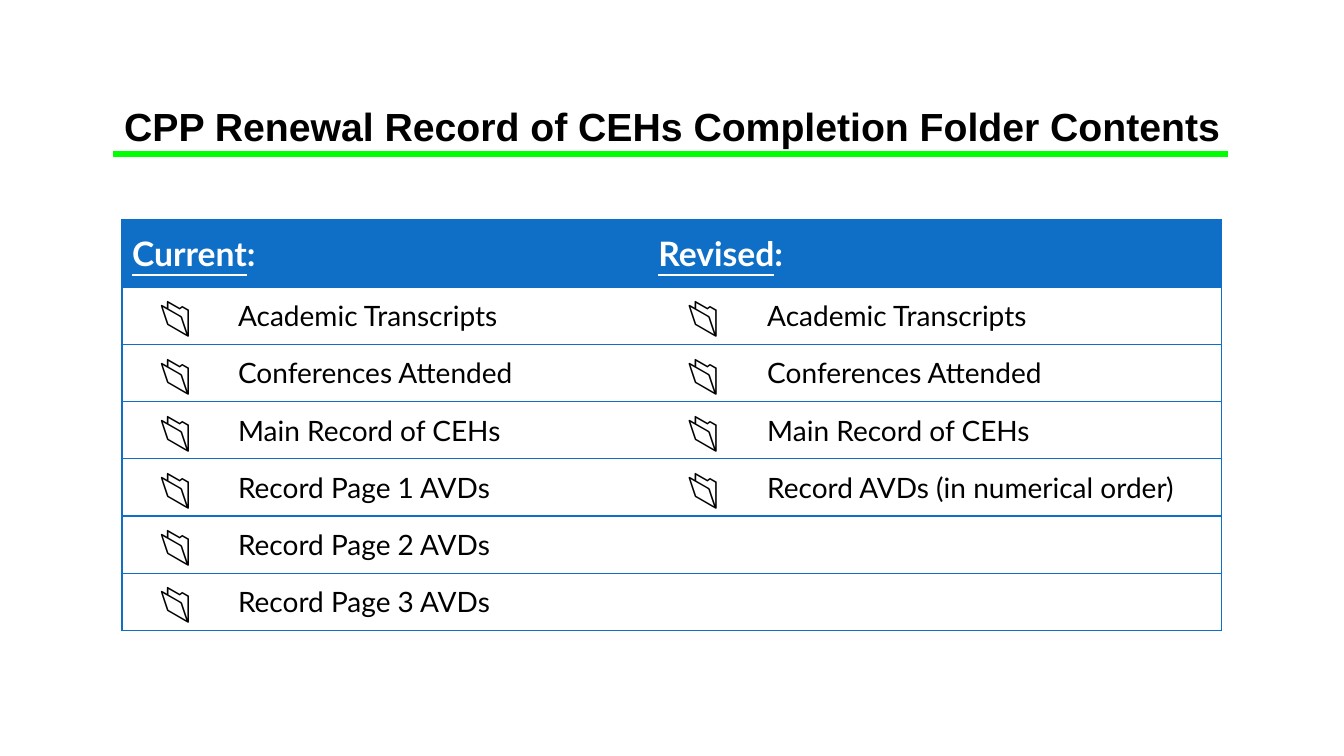
from dataclasses import dataclass
from itertools import zip_longest

from lxml import etree
from pptx import Presentation, util as u
from pptx.dml.color import RGBColor
from pptx.enum import shapes, text
from pptx.oxml import ns

BLUE, GREEN, BLACK, WHITE = "0F6FC6", "00FF00", "000000", "FFFFFF"
FOLDER = "📂"
SLIDE_WIDTH, SLIDE_HEIGHT = u.Inches(13.33), u.Inches(7.5)


@dataclass
class FolderList:
    heading: str
    icon_width: float  # percent of the slide width
    label_width: float
    items: list[str]


@dataclass
class TextStyle:
    size: int
    font: str = "Lato"
    color: str = BLACK
    bold: bool = False


SHARED_ITEMS = ["Academic Transcripts", "Conferences Attended", "Main Record of CEHs"]
FOLDER_LISTS = [
    FolderList("Current", 7.88, 31.28,
               SHARED_ITEMS + [f"Record Page {page} AVDs" for page in (1, 2, 3)]),
    FolderList("Revised", 8.1, 34.58,
               SHARED_ITEMS + ["Record AVDs (in numerical order)"]),
]
TITLE = TextStyle(28, "Arial", bold=True)
HEADING = TextStyle(24, color=WHITE, bold=True)
ICON = TextStyle(28, bold=True)
LABEL = TextStyle(20)


def across(percent: float) -> int:
    return round(SLIDE_WIDTH * percent / 100)


def down(percent: float) -> int:
    return round(SLIDE_HEIGHT * percent / 100)


def rgb(color: str) -> RGBColor:
    return RGBColor.from_string(color)


def style_run(run, style: TextStyle) -> None:
    run.font.size = u.Pt(style.size)
    run.font.name = style.font
    run.font.bold = style.bold
    run.font.color.rgb = rgb(style.color)


def write(frame, words: str, style: TextStyle, centred: bool = False) -> None:
    frame.text = words
    paragraph = frame.paragraphs[0]
    paragraph.alignment = text.PP_ALIGN.CENTER if centred else text.PP_ALIGN.LEFT
    style_run(paragraph.runs[0], style)


def set_borders(cell, visible: str) -> None:
    """Draw blue edges on the sides in visible and clear the others."""
    properties = cell._tc.get_or_add_tcPr()
    for side in "LRTB":
        line = etree.SubElement(properties, ns.qn(f"a:ln{side}"), w=str(u.Pt(1)))
        if side in visible:
            fill = etree.SubElement(line, ns.qn("a:solidFill"))
            etree.SubElement(fill, ns.qn("a:srgbClr"), val=BLUE)
        else:
            etree.SubElement(line, ns.qn("a:noFill"))


def add_title(slide) -> None:
    title = slide.shapes.title
    title.left, title.top = across(8.18), down(12.8)
    title.width, title.height = across(83.65), down(7.6)
    frame = title.text_frame
    frame.word_wrap = True
    frame.auto_size = text.MSO_AUTO_SIZE.SHAPE_TO_FIT_TEXT
    frame.vertical_anchor = text.MSO_ANCHOR.TOP
    write(frame, "CPP Renewal Record of CEHs Completion Folder Contents", TITLE, True)


def add_title_rule(slide) -> None:
    rule = slide.shapes.add_connector(
        shapes.MSO_CONNECTOR.STRAIGHT, across(8.4), down(20.4), across(91.37), down(20.4))
    rule.line.color.rgb = rgb(GREEN)
    rule.line.width = u.Pt(4.5)
    etree.SubElement(rule._element.spPr, ns.qn("a:effectLst"))


def add_folder_table(slide) -> None:
    widths = [across(width) for folder_list in FOLDER_LISTS
              for width in (folder_list.icon_width, folder_list.label_width)]
    item_rows = list(zip_longest(*(folder_list.items for folder_list in FOLDER_LISTS)))
    heights = [down(8.93)] + [down(7.47)] * len(item_rows)
    table = slide.shapes.add_table(
        len(heights), len(widths), across(9.08), down(29.07), sum(widths), sum(heights)).table
    table.horz_banding = False
    for column, width in zip(table.columns, widths):
        column.width = width

    # Row heights, outer frame and row rules
    for row_number, (row, height) in enumerate(zip(table.rows, heights)):
        row.height = height
        for column_number, cell in enumerate(row.cells):
            sides = {0: "L", len(widths) - 1: "R"}.get(column_number, "")
            set_borders(cell, sides + "TB")
            if row_number == 0:
                cell.fill.solid()
                cell.fill.fore_color.rgb = rgb(BLUE)
            else:
                cell.fill.background()

    # Headings with an underlined word
    for list_number, folder_list in enumerate(FOLDER_LISTS):
        cell = table.cell(0, 2 * list_number)
        cell.merge(table.cell(0, 2 * list_number + 1))
        cell.vertical_anchor = text.MSO_ANCHOR.MIDDLE
        write(cell.text_frame, folder_list.heading, HEADING)
        paragraph = cell.text_frame.paragraphs[0]
        paragraph.runs[0].font.underline = True
        colon = paragraph.add_run()
        colon.text = ":"
        style_run(colon, HEADING)

    # Folder icons and labels
    for row_number, labels in enumerate(item_rows, start=1):
        for list_number, label in enumerate(labels):
            if label is None:
                continue
            write(table.cell(row_number, 2 * list_number).text_frame, FOLDER, ICON, True)
            cell = table.cell(row_number, 2 * list_number + 1)
            cell.vertical_anchor = text.MSO_ANCHOR.MIDDLE
            write(cell.text_frame, label, LABEL)


def main() -> None:
    presentation = Presentation()
    presentation.slide_width, presentation.slide_height = SLIDE_WIDTH, SLIDE_HEIGHT
    slide = presentation.slides.add_slide(presentation.slide_layouts[5])
    add_title(slide)
    add_folder_table(slide)
    add_title_rule(slide)
    presentation.save("out.pptx")


if __name__ == "__main__":
    main()
